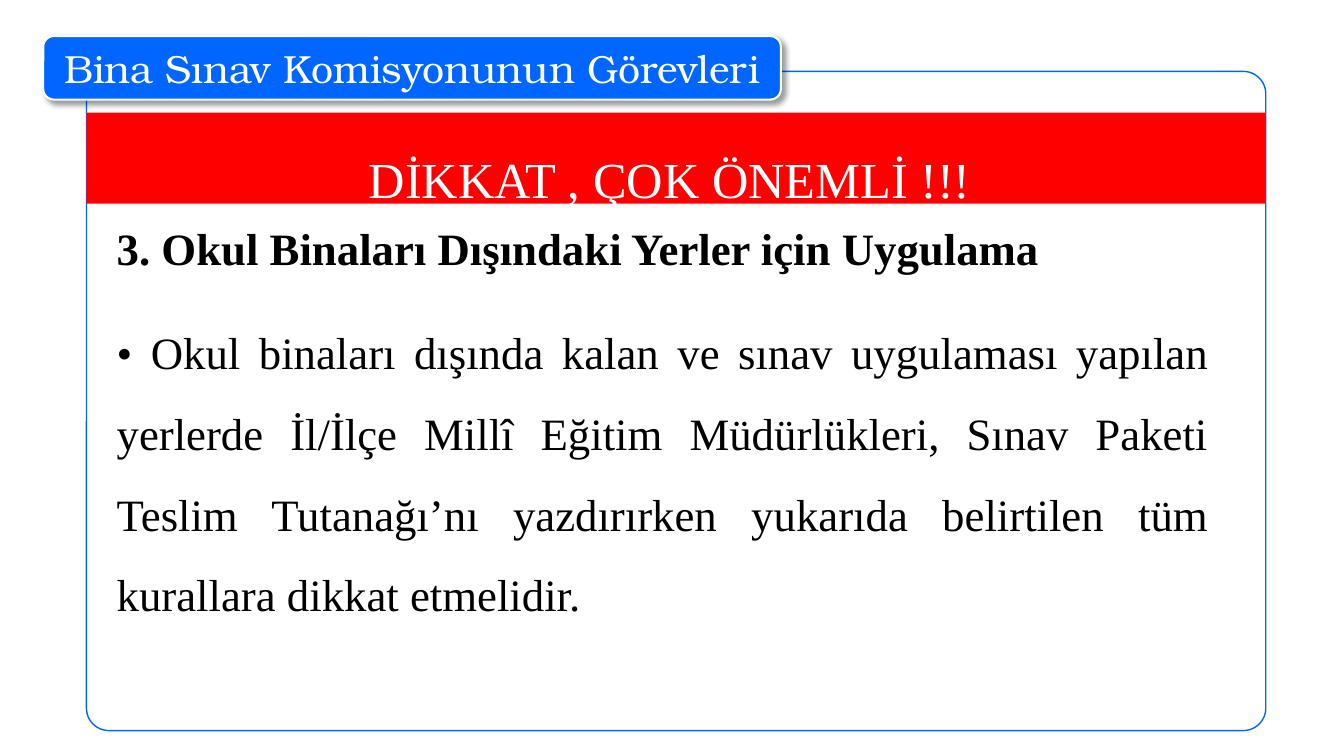
from lxml import etree
from pptx import Presentation
from pptx import util as u
from pptx.dml.color import RGBColor
from pptx.enum import shapes, text
from pptx.oxml import ns

BLUE = RGBColor(0x00, 0x66, 0xFF)
RED = RGBColor(0xFF, 0x00, 0x00)
WHITE = RGBColor(0xFF, 0xFF, 0xFF)
BLACK = RGBColor(0x00, 0x00, 0x00)
BODY_FONT = "Times New Roman"
TITLE_FONT = "TeX Gyre Bonum"
RECT = shapes.MSO_SHAPE.RECTANGLE
ROUNDED = shapes.MSO_SHAPE.ROUNDED_RECTANGLE


class SlideBuilder:
    """Holds the style and the slide; positions are (left, top, width, height) in cm."""

    def __init__(self, slide):
        self.s = slide

    def panel(self, kind, box, fill, line=None, width=1):
        sp = self.s.shapes.add_shape(kind, *map(u.Cm, box))
        sp.shadow.inherit = False
        sp.fill.solid()
        sp.fill.fore_color.rgb = fill
        if line is None:
            sp.line.fill.background()
        else:
            sp.line.color.rgb = line
            sp.line.width = u.Pt(width)
        return sp

    def drop_shadow(self, sp):
        effects = sp._element.spPr.find(ns.qn("a:effectLst"))
        shadow = etree.SubElement(
            effects, ns.qn("a:outerShdw"), blurRad=str(u.Pt(4)),
            dist=str(u.Pt(3)), dir="2700000", algn="tl", rotWithShape="0")
        color = etree.SubElement(shadow, ns.qn("a:srgbClr"), val="000000")
        etree.SubElement(color, ns.qn("a:alpha"), val="40000")

    def label(self, sp, words, size, color, align, font=BODY_FONT, bold=False):
        tf = sp.text_frame
        tf.word_wrap = True
        tf.vertical_anchor = text.MSO_ANCHOR.TOP
        p = tf.paragraphs[0]
        p.text = words
        p.alignment = align
        p.font.name = font
        p.font.size = u.Pt(size)
        p.font.bold = bold
        p.font.color.rgb = color
        return p

    def spaced(self, p):
        p.line_spacing = 1.5
        p.space_after = u.Pt(6)

    def title(self, box, words):
        sp = self.panel(ROUNDED, box, BLUE, WHITE, 1.5)
        self.drop_shadow(sp)
        self.label(sp, words, 28, WHITE, text.PP_ALIGN.CENTER, TITLE_FONT)
        sp.text_frame.vertical_anchor = text.MSO_ANCHOR.MIDDLE

    def banner(self, box, words):
        sp = self.panel(RECT, box, RED)
        self.spaced(self.label(sp, words, 36, WHITE, text.PP_ALIGN.CENTER))

    def body(self, box, words, bold=False):
        sp = self.s.shapes.add_textbox(*map(u.Cm, box))
        self.spaced(self.label(sp, words, 32, BLACK, text.PP_ALIGN.JUSTIFY, bold=bold))


def main():
    prs = Presentation()
    prs.slide_width, prs.slide_height = u.Cm(33.87), u.Cm(19.05)
    b = SlideBuilder(prs.slides.add_slide(prs.slide_layouts[6]))

    # Frame and title tab
    frame = b.panel(ROUNDED, (2.18, 1.8, 29.72, 16.61), WHITE, BLUE)
    frame.adjustments[0] = 0.034
    b.title((1.09, 0.91, 18.59, 1.6), "Bina Sınav Komisyonunun Görevleri")

    # Heading, warning banner and rule
    b.body((2.69, 4.75, 28.04, 2.06),
           "3. Okul Binaları Dışındaki Yerler için Uygulama", bold=True)
    b.banner((2.18, 2.84, 29.72, 2.29), "DİKKAT , ÇOK ÖNEMLİ !!! ")
    b.body((2.69, 7.39, 28.04, 8.46),
           "• Okul binaları dışında kalan ve sınav uygulaması yapılan yerlerde "
           "İl/İlçe Millî Eğitim Müdürlükleri, Sınav Paketi Teslim Tutanağı’nı "
           "yazdırırken yukarıda belirtilen tüm kurallara dikkat etmelidir.")

    prs.save("out.pptx")


if __name__ == "__main__":
    main()
